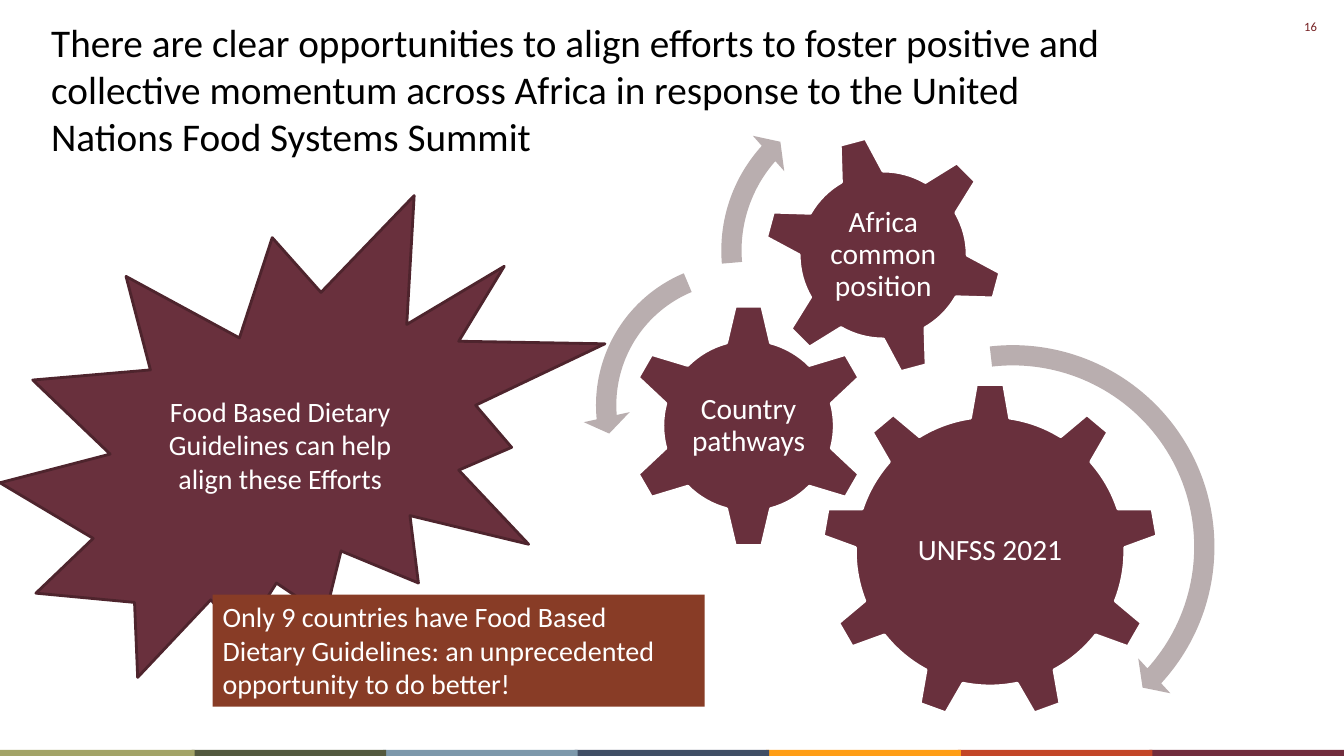
import pptx
import pptx.dml.color
import pptx.enum.shapes
import pptx.enum.text
import pptx.util

SHAPES = pptx.enum.shapes.MSO_SHAPE
ALIGN = pptx.enum.text.PP_ALIGN
ANCHOR = pptx.enum.text.MSO_ANCHOR
CELL = pptx.util.Inches(0.1)
COLUMNS, ROWS = 133.3, 75
WINE, WHITE = "69303D", "FFFFFF"
STRIPES = ["A3A467", "53593E", "7C98AB", "404E65", "FF9E16", "C34628", "712C3D"]

GEARS = [
    (SHAPES.GEAR_9, 23.7, 29.9, 33.4, 0, 0.6, "UNFSS 2021"),
    (SHAPES.GEAR_6, 4.3, 22, 24.3, 0, 0.5, "Country pathways"),
    (SHAPES.GEAR_6, 17.9, 5.3, 23.8, 345, 0.56, "Africa common position"),
]
ARROWS = [
    (SHAPES.CIRCULAR_ARROW, 21.3, 24.8, 42.7, (0.047, 2.99, 25.41, 158.08, 0.055)),
    (SHAPES.LEFT_CIRCULAR_ARROW, 0, 16.6, 31, (0.065, 4.3, 104.89, 148.38, 0.075)),
    (SHAPES.CIRCULAR_ARROW, 12.4, 0, 33.5, (0.06, 3.94, 133.14, 105.08, 0.07)),
]


def color(code):
    """Turn a hex string into a colour."""
    return pptx.dml.color.RGBColor.from_string(code)


def cells(box):
    """Turn columns and rows of the grid into lengths."""
    return [round(CELL * value) for value in box]


def add_shape(page, kind, box, fill, line=None):
    """Add a flat preset shape, outlined only if a line colour is given."""
    shape = page.shapes.add_shape(kind, *cells(box))
    shape.shadow.inherit = False
    shape.fill.solid()
    shape.fill.fore_color.rgb = color(fill)
    if line:
        shape.line.color.rgb = color(line)
        shape.line.width = pptx.util.Pt(2)
    else:
        shape.line.fill.background()
    return shape


def write(shape, text, size, code, align=ALIGN.LEFT, anchor=ANCHOR.TOP):
    """Write one wrapped paragraph into a shape and return its frame."""
    frame = shape.text_frame
    frame.word_wrap = True
    frame.vertical_anchor = anchor
    para = frame.paragraphs[0]
    para.alignment = align
    span = para.add_run()
    span.text = text
    span.font.name = "Calibri"
    span.font.size = pptx.util.Pt(size)
    span.font.color.rgb = color(code)
    return frame


def add_stripes(page, box):
    """Fill a band with equal colour stripes, each slightly over the next."""
    left, top, width, height = box
    step = width / len(STRIPES)
    for index, fill in reversed(list(enumerate(STRIPES))):
        stripe = (left + index * step, top, step + 0.3, height)
        add_shape(page, SHAPES.RECTANGLE, stripe, fill)


def add_gear(page, kind, box, rotation, label_share, text):
    """Place a gear in its box with an upright label at its centre."""
    left, top, size, _ = box
    add_shape(page, kind, box, WINE, WHITE).rotation = rotation
    side = size * label_share
    margin = (size - side) / 2
    label = page.shapes.add_textbox(*cells((left + margin, top + margin, side, side)))
    frame = write(label, text, 21, WHITE, ALIGN.CENTER, ANCHOR.MIDDLE)
    frame.margin_left = frame.margin_right = pptx.util.Inches(0.03)
    frame.margin_top = frame.margin_bottom = pptx.util.Inches(0.03)
    frame.paragraphs[0].line_spacing = 0.9


def add_gear_train(page, left, top):
    """Place the three gears and their turning arrows from a corner."""
    for kind, across, down, size, rotation, share, text in GEARS:
        box = (left + across, top + down, size, size)
        add_gear(page, kind, box, rotation, share, text)
    for kind, across, down, size, adjustments in ARROWS:
        arrow = add_shape(page, kind, (left + across, top + down, size, size), "B9AEAF")
        for index, value in enumerate(adjustments):
            arrow.adjustments[index] = value


def add_guidelines(page, left, top):
    """Place the burst about dietary guidelines."""
    burst = add_shape(page, SHAPES.EXPLOSION2, (left, top, 60, 47.8), WINE, "4E242D")
    write(burst, "Food Based Dietary Guidelines can help align these Efforts",
          20, WHITE, ALIGN.CENTER, ANCHOR.MIDDLE)


def add_heading(page, box):
    """Place the slide's title."""
    title = page.shapes.add_textbox(*cells(box))
    write(title, "There are clear opportunities to align efforts to foster positive and "
          "collective momentum across Africa in response to the United Nations Food "
          "Systems Summit", 28, "000000")


def add_callout(page, box):
    """Place the filled remark over the burst."""
    callout = add_shape(page, SHAPES.RECTANGLE, box, "883C26")
    write(callout, "Only 9 countries have Food Based Dietary Guidelines: an "
          "unprecedented opportunity to do better!", 20, WHITE)


def add_page_number(page, box):
    """Place the slide number in the corner."""
    number = page.shapes.add_textbox(*cells(box))
    write(number, "16", 9, "762123", ALIGN.RIGHT)


def main():
    """Build and save the deck."""
    deck = pptx.Presentation()
    deck.slide_width, deck.slide_height = cells((COLUMNS, ROWS))
    page = deck.slides.add_slide(deck.slide_layouts[6])
    add_page_number(page, (124.6, 1.4, 7, 2.5))
    add_stripes(page, (0, ROWS - 0.6, COLUMNS - 0.3, 0.6))
    add_gear_train(page, 57.8, 8.1)
    add_guidelines(page, 0, 19.4)
    add_heading(page, (4.1, 1.3, 106.4, 15.1))
    add_callout(page, (21.1, 59, 48.8, 11.1))
    deck.save("out.pptx")


if __name__ == "__main__":
    main()
